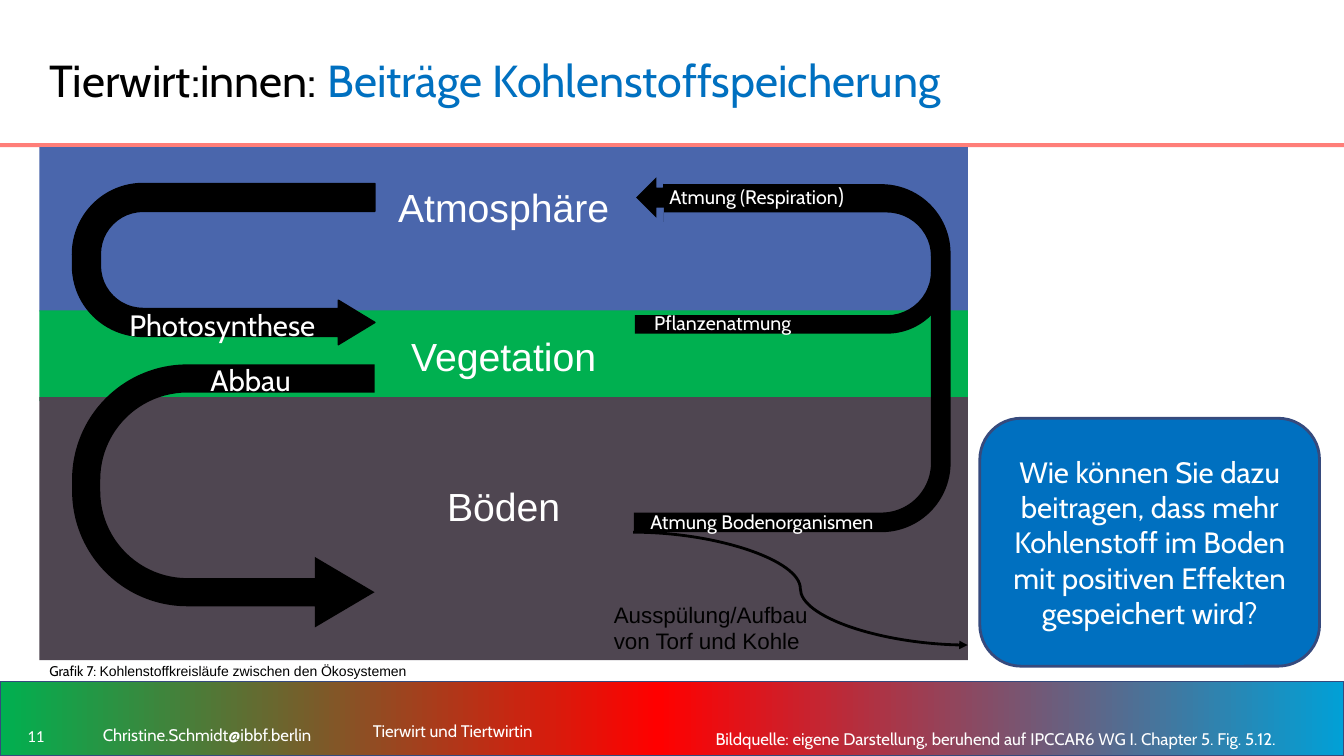
from copy import deepcopy

from lxml import etree
from pptx import Presentation
from pptx.dml.color import RGBColor
from pptx.enum.shapes import MSO_CONNECTOR, MSO_SHAPE
from pptx.enum.text import MSO_ANCHOR, PP_ALIGN
from pptx.oxml.ns import qn
from pptx.util import Inches, Pt

RECT, ROUNDED = MSO_SHAPE.RECTANGLE, MSO_SHAPE.ROUNDED_RECTANGLE
U_TURN, RIGHT_ARROW = MSO_SHAPE.U_TURN_ARROW, MSO_SHAPE.RIGHT_ARROW
CURVE = MSO_CONNECTOR.CURVE
LEFT, CENTER = PP_ALIGN.LEFT, PP_ALIGN.CENTER
TOP, MIDDLE = MSO_ANCHOR.TOP, MSO_ANCHOR.MIDDLE

COLORS = {
    "white": "FFFFFF", "black": "000000", "blue": "0070C0", "border": "364A7D",
    "coral": "FF7E79", "air": "4A66AC", "plants": "00B050", "soil": "4F4651",
    "red": "FF0000", "cyan": "01A0D6",
}


def rgb(name):
    return RGBColor.from_string(COLORS[name])


class CarbonSlide:
    """Draws on one slide; every box is (left, top, width, height) in percent of the slide."""

    def __init__(self, prs, font="Cabin"):
        self.width, self.height = prs.slide_width, prs.slide_height
        self.font = font
        self.shapes = prs.slides.add_slide(prs.slide_layouts[6]).shapes

    def place(self, box):
        """Turn percentages, alternating across and down, into lengths."""
        sides = (self.width, self.height) * 2
        return [round(side * share / 100) for side, share in zip(sides, box)]

    def shape(self, kind, box, fill, border=None, border_width=1, adjust=(), turn=0, flip=False):
        shape = self.shapes.add_shape(kind, *self.place(box))
        shape.shadow.inherit = False
        shape.fill.solid()
        shape.fill.fore_color.rgb = rgb(fill)
        if border:
            shape.line.color.rgb = rgb(border)
            shape.line.width = Pt(border_width)
        else:
            shape.line.fill.background()
        for index, value in enumerate(adjust):
            shape.adjustments[index] = value
        shape.rotation = turn
        if flip:
            shape._element.spPr.find(qn("a:xfrm")).set("flipH", "1")
        return shape

    def gradient_band(self, box, stops, border):
        band = self.shape(RECT, box, stops[0][1], border)
        band.fill.gradient()
        band.fill.gradient_angle = 0
        stop_list = band._element.spPr.find(".//" + qn("a:gsLst"))
        stop_list.append(deepcopy(stop_list[0]))
        for stop, (position, color) in zip(band.fill.gradient_stops, stops):
            stop.position = position
            stop.color.rgb = rgb(color)

    def fill_text(self, shape, parts, size, color="white", align=CENTER, anchor=TOP,
                  insets=(0.1, 0.05, 0.1, 0.05), font=None, spacing=None):
        """Fill a shape with one paragraph; a part is text or (text, own font settings)."""
        frame = shape.text_frame
        frame.word_wrap = True
        frame.vertical_anchor = anchor
        (frame.margin_left, frame.margin_top,
         frame.margin_right, frame.margin_bottom) = map(Inches, insets)
        paragraph = frame.paragraphs[0]
        paragraph.alignment = align
        if spacing:
            paragraph.line_spacing = spacing
        for part in parts:
            text, own = (part, {}) if isinstance(part, str) else part
            run = paragraph.add_run()
            run.text = text
            run.font.name = own.get("font", font or self.font)
            run.font.size = Pt(own.get("size", size))
            run.font.color.rgb = rgb(own.get("color", color))

    def label(self, box, parts, size, **style):
        self.fill_text(self.shapes.add_textbox(*self.place(box)), parts, size, **style)

    def layer(self, top, height, name, fill, bottom_inset):
        ground = self.shape(RECT, (2.93, top, 69.08, height), fill)
        self.fill_text(ground, [name], 28, anchor=MIDDLE, font="Arial",
                       insets=(0, 0.2, 0, bottom_inset))

    def curve(self, ends, color, width):
        leaching = self.shapes.add_connector(CURVE, *self.place(ends))
        leaching.line.color.rgb = rgb(color)
        leaching.line.width = Pt(width)
        outline = leaching._element.spPr.find(qn("a:ln"))
        etree.SubElement(outline, qn("a:tailEnd"), type="triangle")
        etree.SubElement(leaching._element.spPr, qn("a:effectLst"))


def main():
    prs = Presentation()
    prs.slide_width, prs.slide_height = Inches(13.33), Inches(7.5)
    slide = CarbonSlide(prs)

    slide.gradient_band((0, 90.13, 100, 9.87),
                        [(0, "plants"), (0.49, "red"), (1, "cyan")], "border")
    slide.shape(RECT, (0, 18.93, 100, 0.53), "coral")
    slide.label((0, 94.93, 5.33, 4.8), ["11"], 12, anchor=MIDDLE, font="Calibri")
    slide.label((2.93, 2.67, 73.8, 15.73),
                ["Tierwirt:innen: ", ("Beiträge Kohlenstoffspeicherung", {"color": "blue"})],
                32, color="black", align=LEFT, anchor=MIDDLE)

    question = slide.shape(ROUNDED, (72.9, 55.33, 25.28, 32.8), "blue", "border", 2, [0.167])
    slide.fill_text(question, ["Wie können Sie dazu beitragen, dass mehr Kohlenstoff im Boden "
                               "mit positiven Effekten gespeichert wird?"],
                    21, anchor=MIDDLE, insets=(0, 0, 0, 0))

    for layer in [(19.47, 21.73, "Atmosphäre", "air", 0.65),
                  (41.07, 12, "Vegetation", "plants", 0.2),
                  (52.53, 34.8, "Böden", "soil", 0.65)]:
        slide.layer(*layer)

    for box, turn, border, adjust in [
        ((10.65, 14.93, 12, 40), 270, "black", (0.173, 0.138, 0.227, 0.438, 1)),
        ((6.83, 45.6, 19.58, 40), 270, None, (0.107, 0.134, 0.227, 0.438, 1)),
        ((45.98, 26.4, 25.95, 41.87), 90, None, (0.062, 0.033, 0.001, 0.219, 0.909)),
        ((53.4, 13.47, 11.1, 41.6), 90, None, (0.124, 0.125, 0, 0.421, 0.908)),
    ]:
        slide.shape(U_TURN, box, "black", border, adjust=adjust, turn=turn, flip=True)
    slide.curve((47.1, 70.4, 72, 85.33), "black", 2)
    slide.shape(RIGHT_ARROW, (47.33, 23.47, 19.28, 5.33), "black", turn=180)

    for box, parts, size in [
        ((8.1, 40, 16.88, 6), ["Photosynthese"], 21),
        ((11.48, 47.2, 14.33, 6), ["Abbau"], 21),
        ((47.33, 23.47, 17.93, 4.93), ["Atmung (Respiration", (")", {"size": 16})], 14),
        ((45.23, 66.8, 22.95, 4.53), ["Atmung Bodenorganismen"], 14),
        ((42.3, 40.53, 22.95, 4.53), ["Pflanzenatmung"], 14),
    ]:
        slide.label(box, parts, size)
    slide.label((44.93, 78.8, 18.38, 8.53), ["Ausspülung/Aufbau von Torf und Kohle"], 16,
                color="black", align=LEFT, font="Arial")
    slide.label((2.93, 86.93, 55.13, 3.6),
                ["Grafik 7: ",
                 ("Kohlenstoffkreisläufe zwischen den Ökosystemen", {"font": "Arial"})],
                10, color="black", align=LEFT)

    slide.label((52.5, 95.07, 47.5, 4.93),
                ["Bildquelle: eigene Darstellung, beruhend auf IPCCAR6 WG I. "
                 "Chapter 5. Fig. 5.12."], 12, align=LEFT, anchor=MIDDLE, spacing=1.1)
    slide.label((6.45, 94.93, 36.83, 5.07), ["Christine.Schmidt@ibbf.berlin"], 12,
                align=LEFT, insets=(0.16, 0.1, 0.1, 0.1), spacing=0.9)
    slide.label((27, 94.4, 20.85, 4.67), ["Tierwirt und Tiertwirtin"], 12,
                align=LEFT, anchor=MIDDLE)

    prs.save("out.pptx")


if __name__ == "__main__":
    main()
